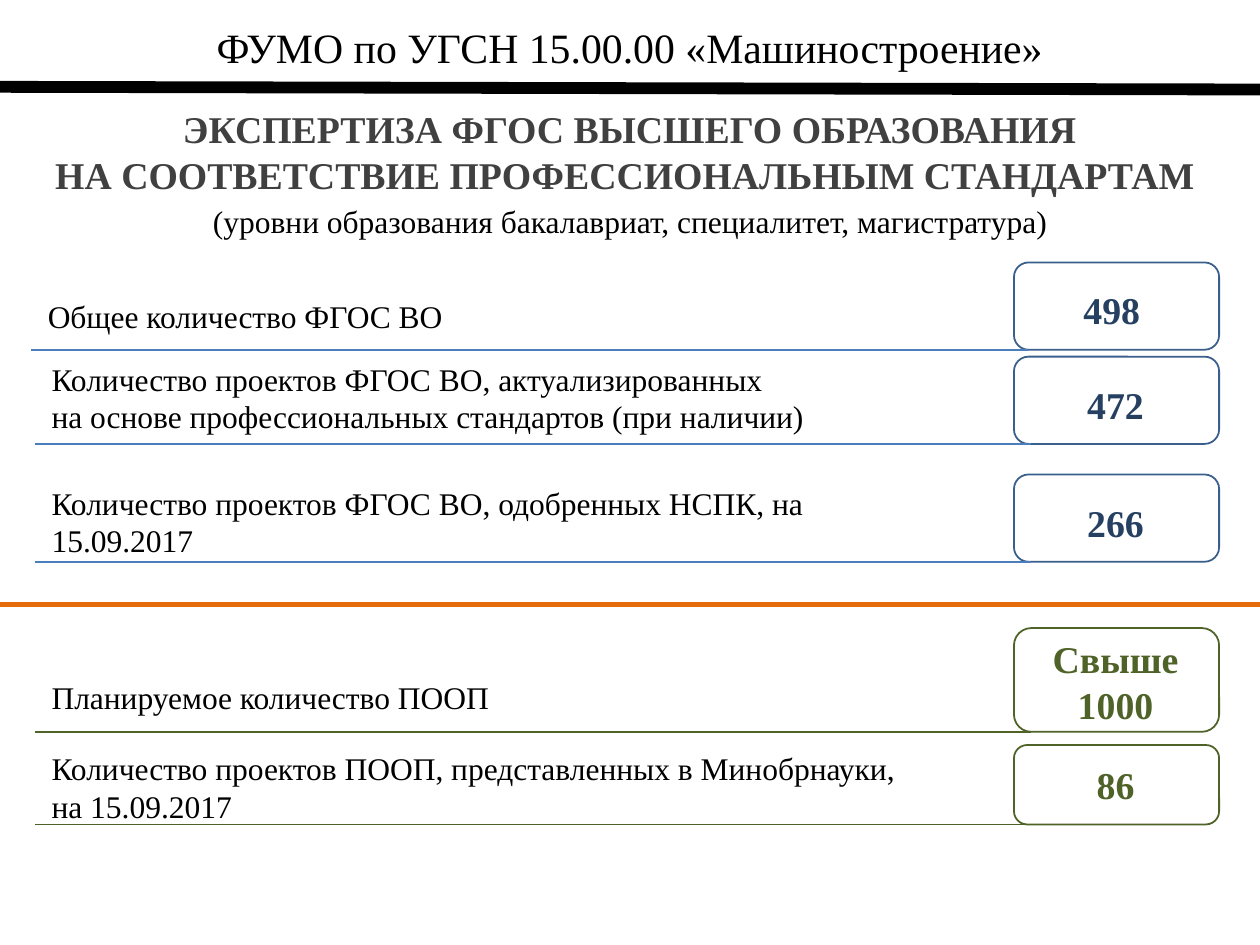
from dataclasses import dataclass

from lxml.etree import SubElement
from pptx import Presentation
from pptx.dml.color import RGBColor
from pptx.enum.shapes import MSO_CONNECTOR, MSO_SHAPE
from pptx.enum.text import MSO_ANCHOR, PP_ALIGN
from pptx.oxml.ns import qn
from pptx.util import Cm, Pt

WIDTH, HEIGHT = 56.44, 42.34
ONE_LINE, TWO_LINES = 1.96, 3.68


@dataclass(frozen=True)
class Theme:
    """Font, colours and type sizes of the slide."""
    font: str = "Times New Roman"
    black: str = "000000"
    heading: str = "404040"
    navy: str = "254061"
    blue_frame: str = "3A5F8C"
    blue_rule: str = "4B7EBC"
    green: str = "4F6228"
    orange: str = "E46C0A"
    header_size: float = 53
    strong_size: float = 48
    body_size: float = 40
    thin: float = 2.25
    divider: float = 6
    thick: float = 15


@dataclass(frozen=True)
class Indicator:
    """One labelled figure with its frame and underline."""
    figure: str
    label: tuple
    label_top: float
    label_height: float
    figure_top: float
    frame_top: float
    frame_height: float
    shift: float = 0


class SlideBuilder:
    """Draws the elements of the slide in one style."""

    def __init__(self, slide, theme):
        """Keep the slide and its theme."""
        self.slide = slide
        self.theme = theme

    def text(self, paragraphs, left, top, width, height, size, color,
             bold=False, align=PP_ALIGN.CENTER, anchor=MSO_ANCHOR.TOP, inset=(0.25, 0.13)):
        """Place a text box; a line feed inside a paragraph breaks its line."""
        frame = self.slide.shapes.add_textbox(Cm(left), Cm(top), Cm(width), Cm(height)).text_frame
        frame.word_wrap = True
        frame.vertical_anchor = anchor
        frame.margin_left = frame.margin_right = Cm(inset[0])
        frame.margin_top = frame.margin_bottom = Cm(inset[1])
        for index, content in enumerate(paragraphs):
            paragraph = frame.add_paragraph() if index else frame.paragraphs[0]
            paragraph.alignment = align
            for number, line in enumerate(content.split("\n")):
                if number:
                    paragraph.add_line_break()
                run = paragraph.add_run()
                run.text = line
                run.font.name = self.theme.font
                run.font.size = Pt(size)
                run.font.bold = bold
                run.font.color.rgb = RGBColor.from_string(color)

    def rule(self, start, end, color, weight):
        """Draw a straight line between two points."""
        rule = self.slide.shapes.add_connector(
            MSO_CONNECTOR.STRAIGHT, *(Cm(value) for value in (*start, *end)))
        rule.line.color.rgb = RGBColor.from_string(color)
        rule.line.width = Pt(weight)
        SubElement(rule._element.spPr, qn("a:effectLst"))

    def frame(self, left, top, width, height, color):
        """Draw an unfilled rounded frame."""
        frame = self.slide.shapes.add_shape(
            MSO_SHAPE.ROUNDED_RECTANGLE, Cm(left), Cm(top), Cm(width), Cm(height))
        frame.shadow.inherit = False
        frame.fill.background()
        frame.line.color.rgb = RGBColor.from_string(color)
        frame.line.width = Pt(self.theme.thin)

    def indicator(self, item, figure_color, frame_color, rule_color):
        """Draw a label, its figure, the frame and the underline."""
        theme = self.theme
        figure_left = 46.2 + item.shift
        bottom = item.frame_top + item.frame_height
        self.text([item.figure], figure_left, item.figure_top, 7.54, 2.31,
                  theme.strong_size, figure_color, bold=True)
        self.text(item.label, 2.06 + item.shift, item.label_top, 39.98, item.label_height,
                  theme.body_size, theme.black, align=PP_ALIGN.LEFT)
        self.frame(45.42, item.frame_top, 9.19, item.frame_height, frame_color)
        self.rule((figure_left, bottom), (1.55 + item.shift, bottom), rule_color, theme.thin)


STANDARDS = (
    Indicator("498", ("Общее количество ФГОС ВО",),
              13.16, ONE_LINE, 12.7, 11.76, 3.91, shift=-0.17),
    Indicator("472", ("Количество проектов ФГОС ВО, актуализированных",
                      "на основе профессиональных стандартов (при наличии)"),
              15.98, TWO_LINES, 16.97, 15.98, 3.91),
    Indicator("266", ("Количество проектов ФГОС ВО, одобренных НСПК, на 15.09.2017",),
              21.54, TWO_LINES, 22.25, 21.26, 3.91),
)
PROGRAMMES = (
    Indicator("Свыше 1000", ("Планируемое количество ПООП",),
              30.23, ONE_LINE, 28.37, 28.14, 4.65),
    Indicator("86", ("Количество проектов ПООП, представленных в Минобрнауки,",
                     "на 15.09.2017"),
              33.45, TWO_LINES, 33.99, 33.38, 3.56),
)


def main():
    """Build and save the slide."""
    deck = Presentation()
    deck.slide_width, deck.slide_height = Cm(WIDTH), Cm(HEIGHT)
    theme = Theme()
    builder = SlideBuilder(deck.slides.add_slide(deck.slide_layouts[6]), theme)

    builder.text(["ФУМО по УГСН 15.00.00 «Машиностроение»"], 0, 0.71, WIDTH, 2.84,
                 theme.header_size, theme.black, inset=(0.56, 0.28))
    builder.rule((0, 3.89), (WIDTH, 4.01), theme.black, theme.thick)
    builder.text(["ЭКСПЕРТИЗА ФГОС ВЫСШЕГО ОБРАЗОВАНИЯ\n"
                  "НА СООТВЕТСТВИЕ ПРОФЕССИОНАЛЬНЫМ СТАНДАРТАМ "], 0, 5, WIDTH, 3.58,
                 theme.strong_size, theme.heading, bold=True,
                 anchor=MSO_ANCHOR.MIDDLE, inset=(0.56, 0.28))
    builder.text(["(уровни образования бакалавриат, специалитет, магистратура)"],
                 0, 8.92, WIDTH, ONE_LINE, theme.body_size, theme.black)

    for item in STANDARDS:
        builder.indicator(item, theme.navy, theme.blue_frame, theme.blue_rule)
    builder.rule((0, 27.08), (WIDTH, 27.08), theme.orange, theme.divider)
    for item in PROGRAMMES:
        builder.indicator(item, theme.green, theme.green, theme.green)

    deck.save("out.pptx")


if __name__ == "__main__":
    main()
